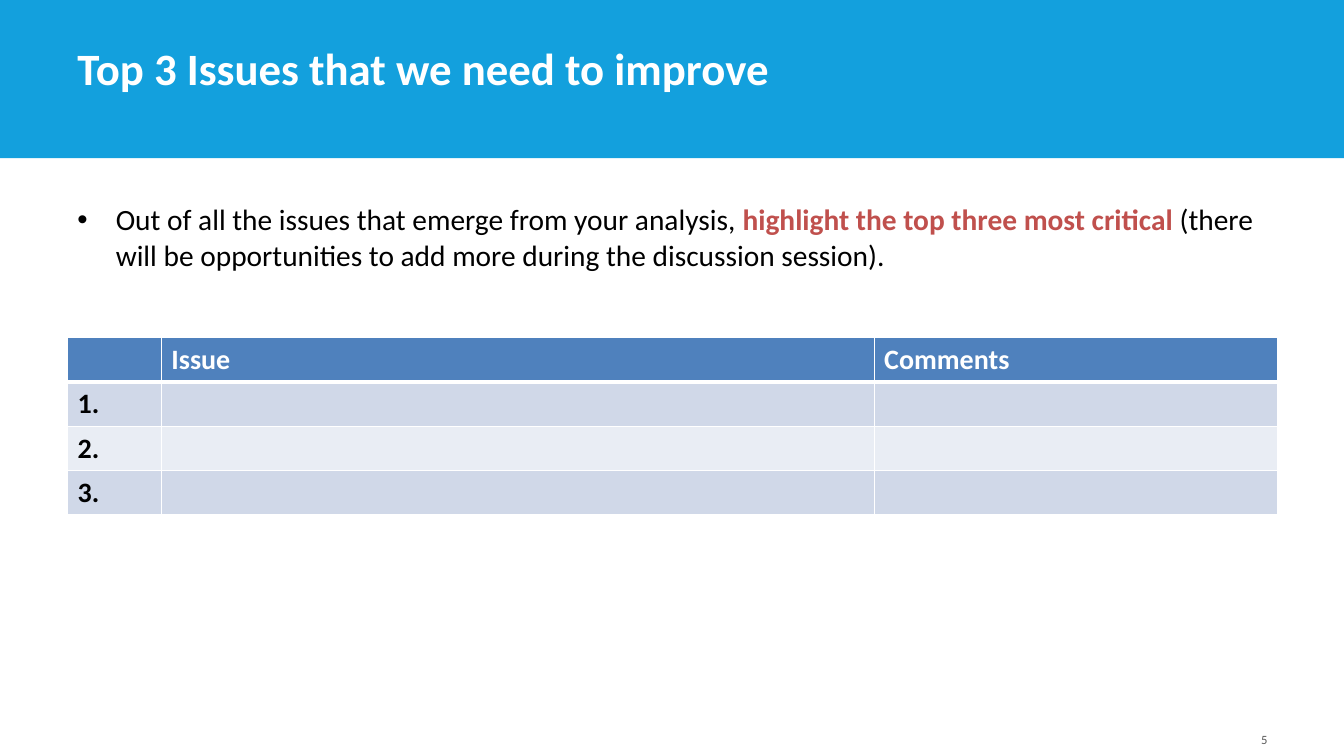
from dataclasses import dataclass

from lxml.etree import SubElement
from pptx import Presentation
from pptx.dml.color import RGBColor
from pptx.enum.shapes import MSO_SHAPE
from pptx.enum.text import MSO_ANCHOR, PP_ALIGN
from pptx.oxml.ns import qn
from pptx.util import Inches, Pt


@dataclass(frozen=True)
class Theme:
    font: str = "Calibri"
    banner: str = "13A0DD"
    header: str = "4F81BD"
    bands: tuple = ("D0D8E8", "E9EDF4")
    white: str = "FFFFFF"
    black: str = "000000"
    accent: str = "C0504D"
    muted: str = "595959"
    title_size: int = 32
    body_size: int = 21
    table_size: int = 20
    number_size: int = 9
    thin_border: int = 1
    header_border: int = 3


THEME = Theme()
MARGIN = 0.67
CONTENT_WIDTH = 12
COLUMN_WIDTHS = (0.93, 7.07, 4)
ROW_HEIGHT = 0.44
TABLE_ROWS = (
    ("", "Issue", "Comments"),
    ("1.", "", ""),
    ("2.", "", ""),
    ("3.", "", ""),
)


def format_font(font, size, color, bold=False):
    font.name = THEME.font
    font.size = Pt(size)
    font.bold = bold
    font.color.rgb = RGBColor.from_string(color)


def add_banner(slide, width, height):
    banner = slide.shapes.add_shape(MSO_SHAPE.RECTANGLE, 0, 0, width, height)
    banner.shadow.inherit = False
    banner.fill.solid()
    banner.fill.fore_color.rgb = RGBColor.from_string(THEME.banner)
    banner.line.fill.background()


def add_text(slide, left, top, width, height, runs, size,
             anchor=MSO_ANCHOR.TOP, alignment=PP_ALIGN.LEFT):
    """Add a one-paragraph box from (text, color, bold) runs and return the paragraph."""
    box = slide.shapes.add_textbox(Inches(left), Inches(top), Inches(width), Inches(height))
    text_frame = box.text_frame
    text_frame.word_wrap = True
    text_frame.vertical_anchor = anchor
    paragraph = text_frame.paragraphs[0]
    paragraph.alignment = alignment
    for text, color, bold in runs:
        run = paragraph.add_run()
        run.text = text
        format_font(run.font, size, color, bold)
    return paragraph


def add_bullet(paragraph, indent):
    properties = paragraph._p.get_or_add_pPr()
    properties.set("marL", str(Inches(indent)))
    properties.set("indent", str(-Inches(indent)))
    SubElement(properties, qn("a:buFont"), typeface="Arial")
    SubElement(properties, qn("a:buChar"), char="•")


def set_borders(cell, top, bottom):
    """Draw white borders; top and bottom are widths in points."""
    properties = cell._tc.get_or_add_tcPr()
    widths = {"L": THEME.thin_border, "R": THEME.thin_border, "T": top, "B": bottom}
    for side, width in widths.items():
        line = SubElement(properties, qn(f"a:ln{side}"), w=str(Pt(width)))
        fill = SubElement(line, qn("a:solidFill"))
        SubElement(fill, qn("a:srgbClr"), val=THEME.white)


def format_cell(cell, text, row_index):
    is_header = row_index == 0
    set_borders(
        cell,
        top=THEME.header_border if row_index == 1 else THEME.thin_border,
        bottom=THEME.header_border if is_header else THEME.thin_border,
    )
    band = THEME.bands[(row_index - 1) % len(THEME.bands)]
    cell.fill.solid()
    cell.fill.fore_color.rgb = RGBColor.from_string(THEME.header if is_header else band)
    cell.text_frame.text = text
    paragraph = cell.text_frame.paragraphs[0]
    color = THEME.white if is_header else THEME.black
    for run in paragraph.runs:
        format_font(run.font, THEME.table_size, color, bold=True)


def add_issue_table(slide, top):
    frame = slide.shapes.add_table(
        len(TABLE_ROWS), len(COLUMN_WIDTHS), Inches(MARGIN), Inches(top),
        Inches(CONTENT_WIDTH), Inches(ROW_HEIGHT * len(TABLE_ROWS)),
    )
    table = frame.table
    for column, width in zip(table.columns, COLUMN_WIDTHS):
        column.width = Inches(width)
    for row_index, texts in enumerate(TABLE_ROWS):
        table.rows[row_index].height = Inches(ROW_HEIGHT)
        for column_index, text in enumerate(texts):
            format_cell(table.cell(row_index, column_index), text, row_index)


def main():
    presentation = Presentation()
    presentation.slide_width = Inches(13.33)
    presentation.slide_height = Inches(7.5)
    slide = presentation.slides.add_slide(presentation.slide_layouts[6])

    add_banner(slide, presentation.slide_width, Inches(1.57))
    add_text(slide, MARGIN, 0.38, 10.41, 0.61,
             [("Top 3 Issues that we need to improve", THEME.white, True)],
             THEME.title_size, anchor=MSO_ANCHOR.BOTTOM)
    instruction = add_text(slide, MARGIN, 1.95, CONTENT_WIDTH, 0.86, [
        ("Out of all the issues that emerge from your analysis, ", THEME.black, False),
        ("highlight the top three most critical ", THEME.accent, True),
        ("(there will be opportunities to add more during the discussion session).",
         THEME.black, False),
    ], THEME.body_size)
    add_bullet(instruction, 0.38)
    add_issue_table(slide, 3.35)
    add_text(slide, 9.56, 7.06, 3.11, 0.4, [("5", THEME.muted, False)],
             THEME.number_size, anchor=MSO_ANCHOR.BOTTOM, alignment=PP_ALIGN.RIGHT)

    presentation.save("out.pptx")


if __name__ == "__main__":
    main()
